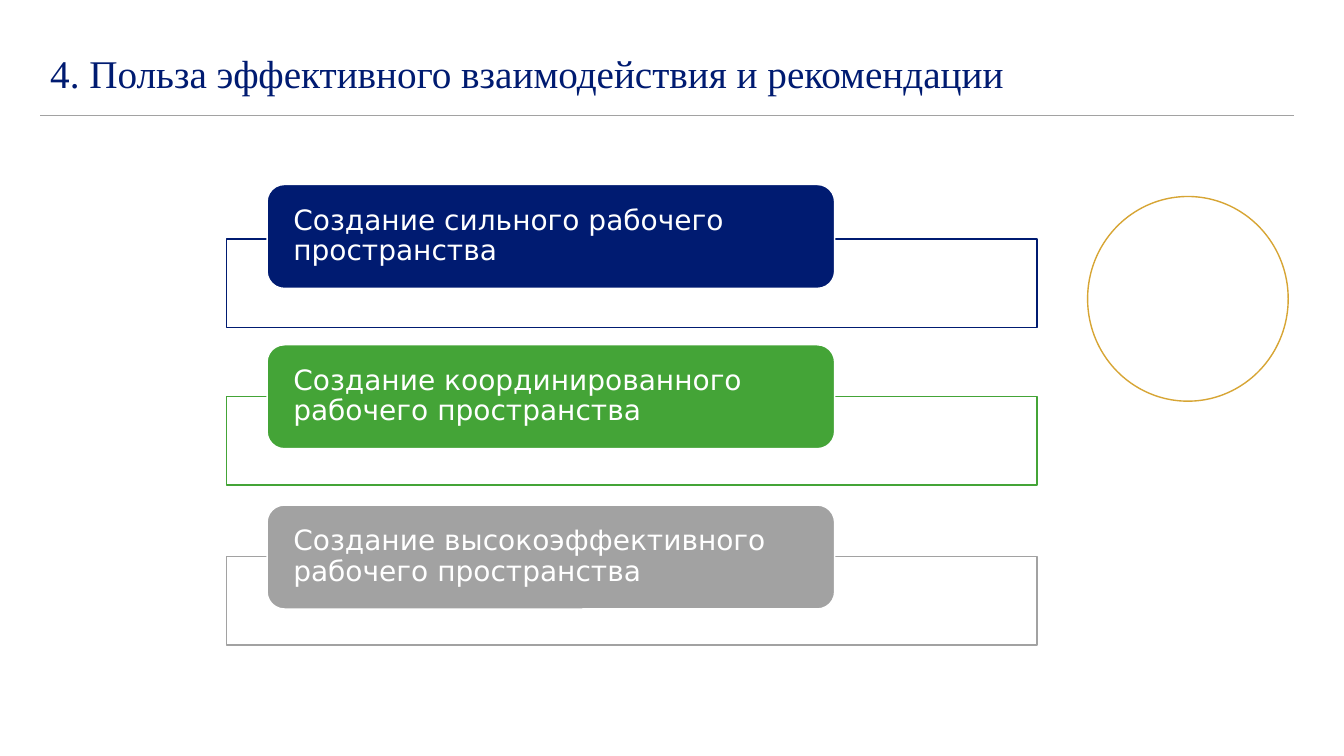
import pptx
import pptx.util
import pptx.dml.color
import pptx.enum.shapes
import pptx.enum.text
import pptx.oxml.ns
import lxml.etree

Pt = pptx.util.Pt
SHAPES = pptx.enum.shapes.MSO_SHAPE
NAVY, GREEN, GRAY, GOLD, WHITE = "001B71", "44A437", "A2A2A2", "D7A534", "FFFFFF"

CARD_TOP, CARD_STEP = 131.8, 114.5
# Label, colour, top of the frame behind the label
CARDS = [
    ("Создание сильного рабочего пространства", NAVY, 170.6),
    ("Создание координированного рабочего пространства", GREEN, 283),
    ("Создание высокоэффективного рабочего пространства", GRAY, 397.4),
]


def rgb(color):
    return pptx.dml.color.RGBColor.from_string(color)


def add_shape(slide, kind, box, line, fill=None):
    sp = slide.shapes.add_shape(kind, *map(Pt, box))
    sp.shadow.inherit = False
    if fill:
        sp.fill.solid()
        sp.fill.fore_color.rgb = rgb(fill)
    else:
        sp.fill.background()
    sp.line.color.rgb = rgb(line)
    sp.line.width = Pt(1)
    return sp


def set_text(sp, text, font, size, color):
    tf = sp.text_frame
    tf.word_wrap = True
    tf.vertical_anchor = pptx.enum.text.MSO_ANCHOR.MIDDLE
    p = tf.paragraphs[0]
    p.text = text
    p.alignment = pptx.enum.text.PP_ALIGN.LEFT
    p.line_spacing = 0.9
    p.font.name = font
    p.font.size = Pt(size)
    p.font.color.rgb = rgb(color)
    return tf


def add_rule(slide, x1, x2, y, color):
    line = slide.shapes.add_connector(
        pptx.enum.shapes.MSO_CONNECTOR.STRAIGHT, Pt(x1), Pt(y), Pt(x2), Pt(y))
    line.line.color.rgb = rgb(color)
    line.line.width = Pt(1)
    sp_pr = line._element.spPr
    lxml.etree.SubElement(sp_pr, pptx.oxml.ns.qn("a:effectLst"))


def add_card(slide, top, frame_top, text, color):
    frame = add_shape(slide, SHAPES.RECTANGLE, (162, frame_top, 578.9, 63.4), color, WHITE)
    fill_color = frame._element.spPr.find(".//" + pptx.oxml.ns.qn("a:srgbClr"))
    alpha = lxml.etree.SubElement(fill_color, pptx.oxml.ns.qn("a:alpha"))
    alpha.set("val", "90000")
    label = add_shape(slide, SHAPES.ROUNDED_RECTANGLE, (190.8, top, 405.4, 74.2), WHITE, color)
    tf = set_text(label, text, "DejaVu Sans", 20, WHITE)
    tf.margin_left = tf.margin_right = Pt(15.1)
    tf.margin_top = tf.margin_bottom = 0


def main():
    prs = pptx.Presentation()
    prs.slide_width, prs.slide_height = Pt(960), Pt(540)
    slide = prs.slides.add_slide(prs.slide_layouts[6])

    # Decorative ring and heading rule
    ring = add_shape(slide, SHAPES.OVAL, (775.4, 141.8, 146.2, 143.3), GOLD)
    ring.rotation = 270
    add_rule(slide, 28.8, 924.5, 82.3, GRAY)

    # Heading
    title = slide.shapes.add_textbox(Pt(28.8), Pt(32.4), Pt(895.7), Pt(43.2))
    set_text(title, "4. Польза эффективного взаимодействия и рекомендации",
             "Times New Roman", 28, NAVY)

    # Cards
    for i, (text, color, frame_top) in enumerate(CARDS):
        add_card(slide, CARD_TOP + i * CARD_STEP, frame_top, text, color)

    prs.save("out.pptx")


if __name__ == "__main__":
    main()
